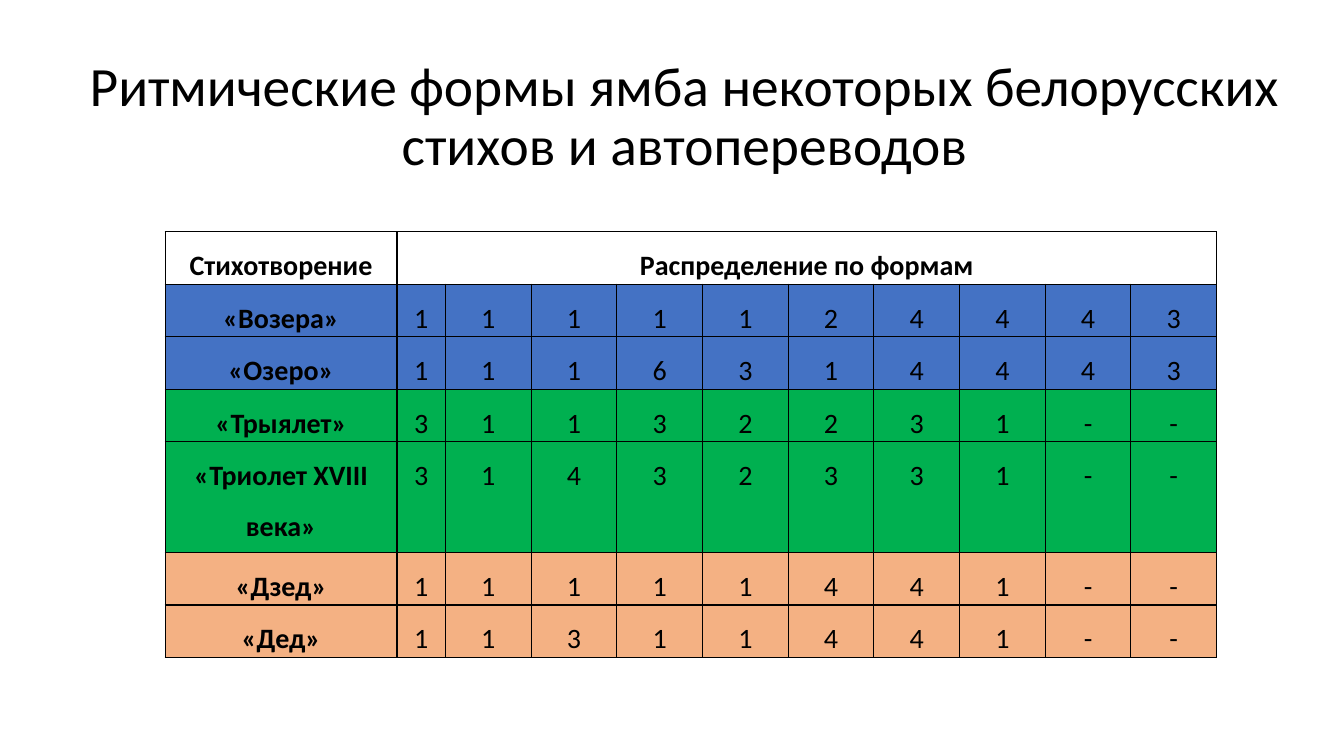
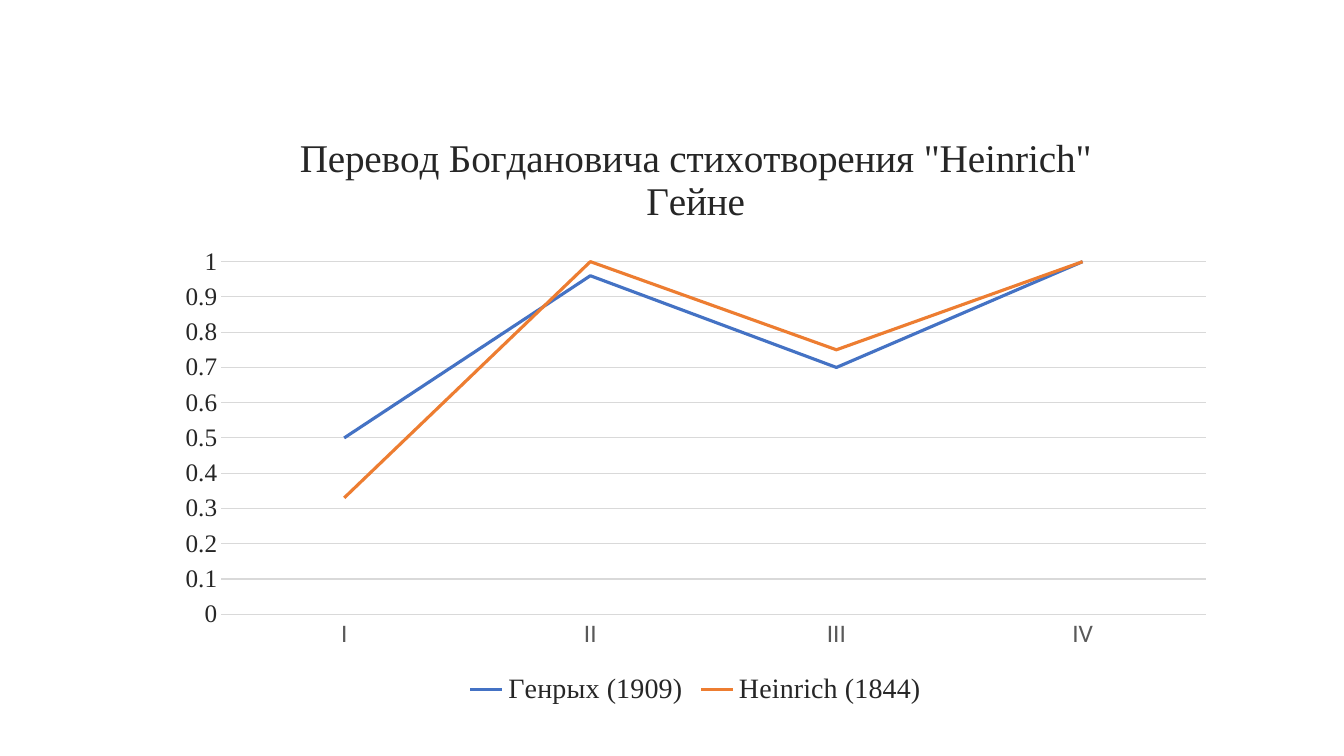
from lxml import etree
from pptx import Presentation
from pptx.chart.data import CategoryChartData
from pptx.dml.color import RGBColor
from pptx.enum.chart import XL_CHART_TYPE, XL_LEGEND_POSITION, XL_MARKER_STYLE, XL_TICK_MARK
from pptx.enum.text import MSO_ANCHOR, MSO_AUTO_SIZE, PP_ALIGN
from pptx.oxml.ns import qn
from pptx.util import Pt

CENTER = PP_ALIGN.CENTER
MIDDLE = MSO_ANCHOR.MIDDLE
NO_AUTO_SIZE = MSO_AUTO_SIZE.NONE
LINE_CHART = XL_CHART_TYPE.LINE
LEGEND_BOTTOM = XL_LEGEND_POSITION.BOTTOM
NO_MARKER = XL_MARKER_STYLE.NONE
NO_TICK = XL_TICK_MARK.NONE

BLACK = RGBColor(0x00, 0x00, 0x00)
WHITE = RGBColor(0xFF, 0xFF, 0xFF)
BLUE = RGBColor(0x44, 0x72, 0xC4)
GREEN = RGBColor(0x00, 0xB0, 0x50)
PEACH = RGBColor(0xF4, 0xB1, 0x83)
ORANGE = RGBColor(0xED, 0x7D, 0x31)
DARK_GRAY = RGBColor(0x26, 0x26, 0x26)
GRAY = RGBColor(0x59, 0x59, 0x59)
LIGHT_GRAY = RGBColor(0xD9, 0xD9, 0xD9)

SANS = "Calibri"
SERIF = "Times New Roman"
TITLE_ONLY, BLANK = 5, 6


def set_font(font, color, **values):
    font.color.rgb = color
    for name, value in values.items():
        setattr(font, name, value)


def set_borders(cell, color, width):
    properties = cell._tc.get_or_add_tcPr()
    for index, side in enumerate(("a:lnL", "a:lnR", "a:lnT", "a:lnB")):
        line = etree.Element(qn(side), w=str(width))
        fill = etree.SubElement(line, qn("a:solidFill"))
        etree.SubElement(fill, qn("a:srgbClr"), val=str(color))
        properties.insert(index, line)


presentation = Presentation()
presentation.slide_width = Pt(960)
presentation.slide_height = Pt(540)

table_slide = presentation.slides.add_slide(presentation.slide_layouts[TITLE_ONLY])
title = table_slide.shapes.title
title_place = {"left": Pt(27.4), "top": Pt(47.5), "width": Pt(923), "height": Pt(118)}
for name, value in title_place.items():
    setattr(title, name, value)
title_frame = title.text_frame
title_format = {
    "text": "Ритмические формы ямба некоторых белорусских стихов и автопереводов",
    "word_wrap": True,
    "auto_size": NO_AUTO_SIZE,
    "vertical_anchor": MIDDLE,
    "margin_bottom": Pt(48),
}
for name, value in title_format.items():
    setattr(title_frame, name, value)
title_paragraph = title_frame.paragraphs[0]
title_paragraph.alignment = CENTER
title_paragraph.line_spacing = 0.9
set_font(title_paragraph.runs[0].font, BLACK, name=SANS, size=Pt(39.6))

poems = [
    ("«Возера»", "1111124443", BLUE),
    ("«Озеро»", "1116314443", BLUE),
    ("«Трыялет»", "31132231--", GREEN),
    ("«Триолет XVIII века»", "31432331--", GREEN),
    ("«Дзед»", "11111441--", PEACH),
    ("«Дед»", "11311441--", PEACH),
]
rows = [(["Стихотворение", "Распределение по формам"] + [""] * 9, WHITE)]
rows += [([poem, *forms], color) for poem, forms, color in poems]
column_widths = [165.6, 34.6] + [61.2] * 9
row_heights = [37.5] * 4 + [79.2] + [37.5] * 2

table = table_slide.shapes.add_table(
    len(rows), len(column_widths), Pt(118), Pt(165.6), Pt(sum(column_widths)), Pt(sum(row_heights))
).table
for column, width in zip(table.columns, column_widths):
    column.width = Pt(width)
for row, height in zip(table.rows, row_heights):
    row.height = Pt(height)
table.cell(0, 1).merge(table.cell(0, 10))

cell_margins = {"margin_left": Pt(5), "margin_right": Pt(5), "margin_top": 0, "margin_bottom": 0}
for row_index, (texts, color) in enumerate(rows):
    for column_index, text in enumerate(texts):
        cell = table.cell(row_index, column_index)
        for name, value in cell_margins.items():
            setattr(cell, name, value)
        cell.fill.solid()
        cell.fill.fore_color.rgb = color
        set_borders(cell, BLACK, Pt(1))
        cell.text = text
        paragraph = cell.text_frame.paragraphs[0]
        paragraph.alignment = CENTER
        paragraph.line_spacing = 1.5
        bold = row_index == 0 or column_index == 0
        set_font(paragraph.font, BLACK, name=SANS, size=Pt(20), bold=bold)

chart_slide = presentation.slides.add_slide(presentation.slide_layouts[BLANK])
chart_data = CategoryChartData()
chart_data.categories = ["I", "II", "III", "IV"]
chart_data.add_series("Генрых (1909)", (0.5, 0.96, 0.7, 1))
chart_data.add_series("Heinrich (1844)", (0.33, 1, 0.75, 1))
chart = chart_slide.shapes.add_chart(
    LINE_CHART, Pt(117.4), Pt(77.8), Pt(759), Pt(430), chart_data
).chart
set_font(chart.font, BLACK, name=SANS, size=Pt(18))

chart.has_title = True
chart_title = chart.chart_title
chart_title.include_in_layout = False
chart_title.text_frame.text = 'Перевод Богдановича стихотворения "Heinrich" Гейне'
title_run = chart_title.text_frame.paragraphs[0].runs[0]
set_font(title_run.font, DARK_GRAY, name=SERIF, size=Pt(28), bold=False)

chart.has_legend = True
chart.legend.position = LEGEND_BOTTOM
chart.legend.include_in_layout = False
set_font(chart.legend.font, DARK_GRAY, name=SERIF, size=Pt(20))

category_axis = chart.category_axis
value_axis = chart.value_axis
for axis, color, font_name in ((category_axis, GRAY, SANS), (value_axis, DARK_GRAY, SERIF)):
    axis.major_tick_mark = NO_TICK
    axis.minor_tick_mark = NO_TICK
    set_font(axis.tick_labels.font, color, name=font_name, size=Pt(18))
value_axis.minimum_scale = 0
value_axis.maximum_scale = 1
value_axis.major_unit = 0.1
value_axis.has_major_gridlines = True
value_axis.format.line.fill.background()
for line in (category_axis.format.line, value_axis.major_gridlines.format.line):
    line.color.rgb = LIGHT_GRAY
    line.width = Pt(0.75)

chart.plots[0].vary_by_categories = False
for series, color in zip(chart.plots[0].series, (BLUE, ORANGE)):
    series.smooth = False
    series.marker.style = NO_MARKER
    series.format.line.color.rgb = color
    series.format.line.width = Pt(2.25)

presentation.save("out.pptx")
